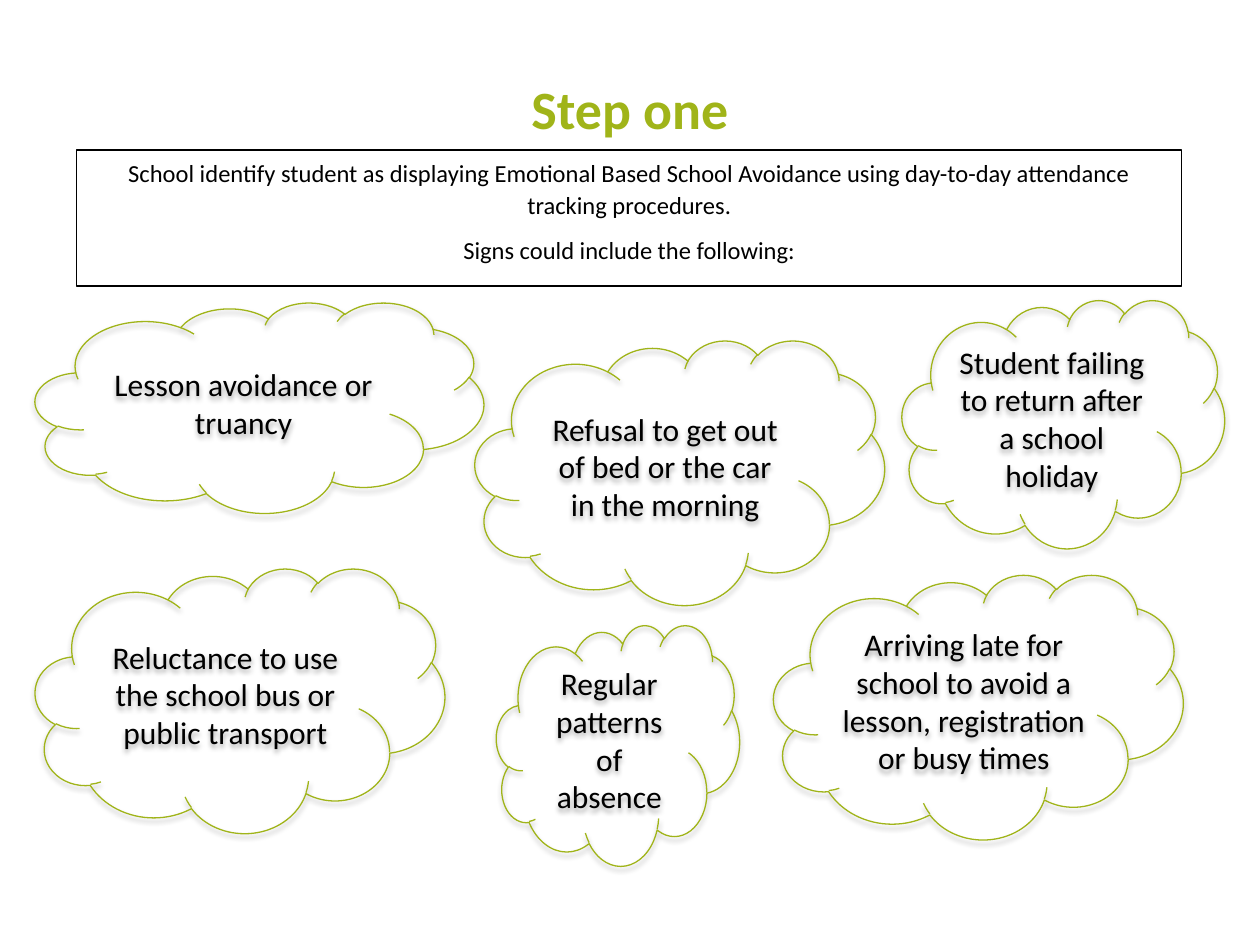
from lxml import etree
from pptx import Presentation
from pptx.dml.color import RGBColor
from pptx.enum.shapes import MSO_SHAPE
from pptx.enum.text import MSO_ANCHOR, PP_ALIGN
from pptx.oxml.ns import qn
from pptx.util import Inches, Pt

CLOUD, RECTANGLE = MSO_SHAPE.CLOUD, MSO_SHAPE.RECTANGLE
TOP, MIDDLE = MSO_ANCHOR.TOP, MSO_ANCHOR.MIDDLE
CENTER = PP_ALIGN.CENTER

GREEN = RGBColor(0xA0, 0xB4, 0x19)
BLACK = RGBColor(0, 0, 0)
WHITE = RGBColor(255, 255, 255)

# Left, top, width, height and text of each sign
SIGNS = [
    (0.28, 2.4, 3.56, 1.67, "Lesson avoidance or truancy"),
    (7.16, 2.38, 2.56, 1.97, "Student failing to return after a school holiday"),
    (3.77, 2.7, 3.25, 2.1, "Refusal to get out of bed or the car in the morning"),
    (3.94, 4.96, 1.93, 1.91, "Regular patterns of absence"),
    (6.14, 4.56, 3.25, 2.1,
     "Arriving late for school to avoid a lesson, registration or busy times"),
    (0.28, 4.51, 3.25, 2.1, "Reluctance to use the school bus or public transport"),
]


class SlideBuilder:
    font_name = "Calibri"
    line_width = Pt(0.75)

    def __init__(self, slide):
        self.slide = slide

    def add_text(self, shape, texts, size, color=BLACK, bold=False, anchor=MIDDLE, **spacing):
        frame = shape.text_frame
        frame.word_wrap = True
        frame.vertical_anchor = anchor
        font_format = {"name": self.font_name, "size": Pt(size), "bold": bold}
        paragraph_format = {"alignment": CENTER, **spacing}
        for index, text in enumerate(texts):
            paragraph = frame.add_paragraph() if index else frame.paragraphs[0]
            for name, value in paragraph_format.items():
                setattr(paragraph, name, value)
            run = paragraph.add_run()
            run.text = text
            for name, value in font_format.items():
                setattr(run.font, name, value)
            run.font.color.rgb = color

    def outlined_shape(self, kind, box, line_color):
        shape = self.slide.shapes.add_shape(kind, *map(Inches, box))
        shape.shadow.inherit = False
        shape.line.color.rgb = line_color
        shape.line.width = self.line_width
        return shape

    def title(self, box, text):
        shape = self.slide.shapes.add_textbox(*map(Inches, box))
        # The larger bottom margin lifts the title clear of the introduction
        shape.text_frame.margin_top = 0
        shape.text_frame.margin_bottom = Inches(0.52)
        self.add_text(shape, [text], 30.8, GREEN, bold=True)

    def introduction(self, box, texts):
        shape = self.outlined_shape(RECTANGLE, box, BLACK)
        shape.fill.solid()
        shape.fill.fore_color.rgb = WHITE
        self.add_text(shape, texts, 14, anchor=TOP, line_spacing=1.07, space_after=Pt(8))

    def cloud(self, box, text):
        shape = self.outlined_shape(CLOUD, box, GREEN)
        shape.fill.background()
        self.add_shadow(shape)
        self.add_text(shape, [text], 18)

    def add_shadow(self, shape):
        effects = shape._element.spPr.find(qn("a:effectLst"))
        shadow = etree.SubElement(
            effects, qn("a:outerShdw"), blurRad=str(Pt(3.1)), dist=str(Pt(1.8)),
            dir="5400000", rotWithShape="0")
        color = etree.SubElement(shadow, qn("a:srgbClr"), val=str(BLACK))
        etree.SubElement(color, qn("a:alpha"), val="35000")


def main():
    presentation = Presentation()
    presentation.slide_width = Inches(10)
    presentation.slide_height = Inches(7.5)
    builder = SlideBuilder(presentation.slides.add_slide(presentation.slide_layouts[6]))

    # Heading
    builder.title((0.81, 0.62, 8.38, 0.99), "Step one")

    # Signs of avoidance
    for *box, text in SIGNS:
        builder.cloud(box, text)

    # Introduction
    builder.introduction((0.61, 1.19, 8.77, 1.08), [
        "School identify student as displaying Emotional Based School Avoidance "
        "using day-to-day attendance tracking procedures.",
        "Signs could include the following:",
    ])

    presentation.save("out.pptx")


if __name__ == "__main__":
    main()
